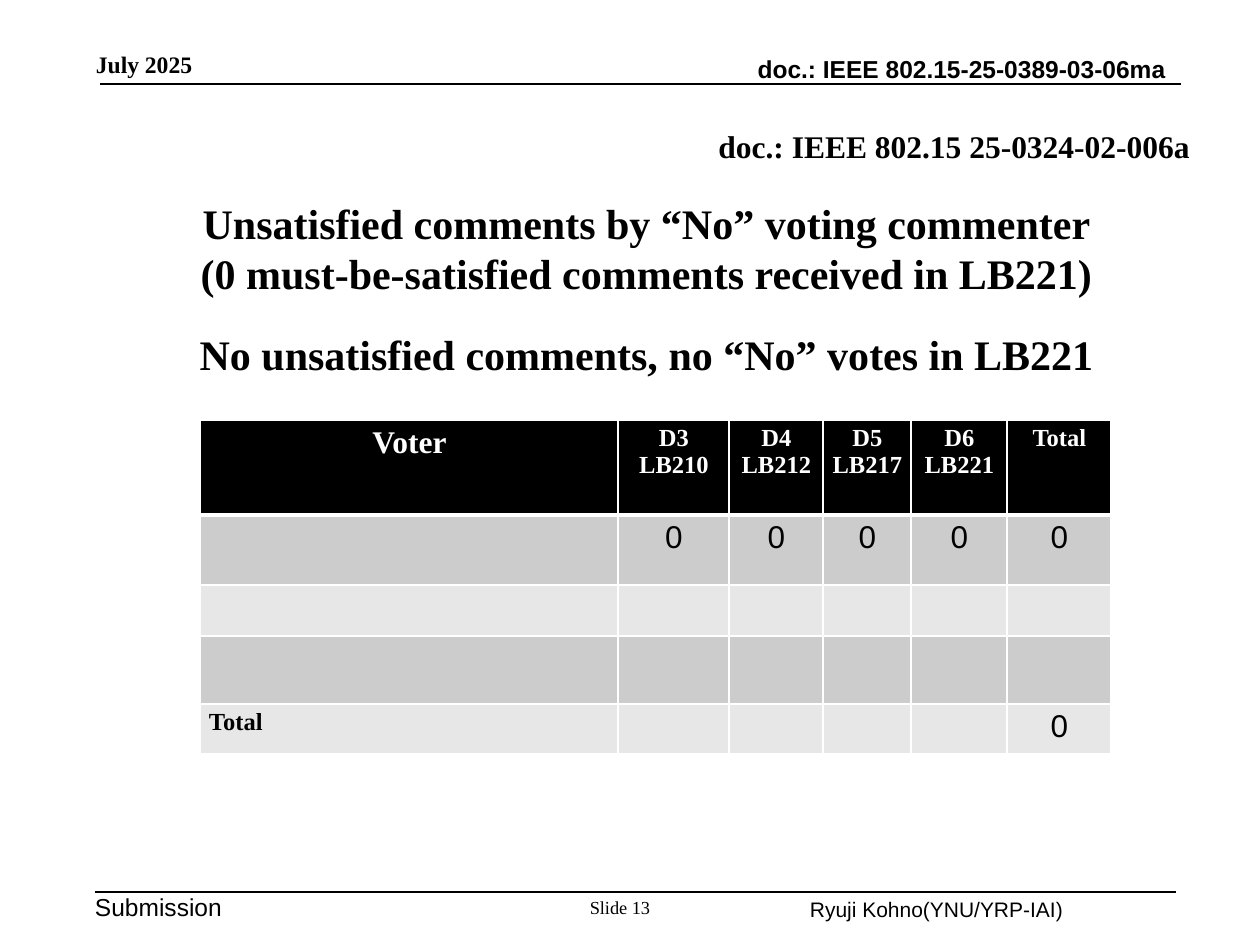
from lxml import etree
from pptx import Presentation
from pptx import util as u
from pptx.dml.color import RGBColor
from pptx.enum import shapes, text
from pptx.oxml import ns

PX = 914400 // 126
BLACK = RGBColor(0, 0, 0)
WHITE = RGBColor(255, 255, 255)
DARK = RGBColor(0xCC, 0xCC, 0xCC)
LIGHT = RGBColor(0xE7, 0xE7, 0xE7)
SERIF, SANS = "Times New Roman", "Arial"
LEFT, MID, RIGHT = text.PP_ALIGN.LEFT, text.PP_ALIGN.CENTER, text.PP_ALIGN.RIGHT
TOP, CENTER, BASE = text.MSO_ANCHOR.TOP, text.MSO_ANCHOR.MIDDLE, text.MSO_ANCHOR.BOTTOM

COLS = [418, 111, 94, 88, 96, 104]
ROWS = [95, 70, 51, 68, 50]
HEADS = ["Voter", "D3 LB210", "D4 LB212", "D5 LB217", "D6\nLB221", "Total"]
CELLS = [HEADS, [""] + ["0"] * 5, [""] * 6, [""] * 6, ["Total"] + [""] * 4 + ["0"]]


def px(n):
    return u.Emu(n * PX)


def write(frame, lines, size, font, bold=False, align=LEFT, color=BLACK, gap=0):
    """Fill a frame, one paragraph a line; a vertical tab breaks inside one."""
    for i, line in enumerate(lines):
        para = frame.add_paragraph() if i else frame.paragraphs[0]
        para.alignment = align
        if i:
            para.space_before = u.Pt(gap)
        for j, part in enumerate(line.split("\v")):
            if j:
                para.add_line_break()
            run = para.add_run()
            run.text = part
            run.font.size = u.Pt(size)
            run.font.name = font
            run.font.bold = bold
            run.font.color.rgb = color


def label(slide, box, lines, size, font, anchor=TOP, **look):
    frame = slide.shapes.add_textbox(*map(px, box)).text_frame
    frame.word_wrap = True
    frame.vertical_anchor = anchor
    frame.margin_left = frame.margin_right = 0
    frame.margin_top = frame.margin_bottom = 0
    write(frame, lines, size, font, **look)


def rule(slide, x, y, w):
    line = slide.shapes.add_connector(
        shapes.MSO_CONNECTOR.STRAIGHT, px(x), px(y), px(x + w), px(y))
    line.line.color.rgb = BLACK
    line.line.width = u.Pt(1)
    etree.SubElement(line._element.spPr, ns.qn("a:effectLst"))


def header(slide, x, y, w):
    label(slide, (x, y, 258, 28), ["July 2025"], 13.5, SERIF, BASE, bold=True)
    label(slide, (x + 524, y + 3, 546, 30), ["doc.: IEEE 802.15-25-0389-03-06ma"],
          14, SANS, BASE, bold=True, align=RIGHT)
    rule(slide, x + 4, y + 34, w)


def footer(slide, x, y, w):
    rule(slide, x, y, w)
    label(slide, (x, y, 146, 30), ["Submission"], 14, SANS)
    label(slide, (x + 488, y + 4, 74, 38), ["Slide 13"], 10.5, SERIF, align=MID)
    label(slide, (x + 715, y + 5, 327, 30), ["Ryuji Kohno(YNU/YRP-IAI)"], 12, SANS)


def title(slide, x, y, w, h):
    label(slide, (x + 451, y - 57, 643, 38), ["doc.: IEEE 802.15 25-0324-02-006a"],
          18, SERIF, BASE, bold=True, align=RIGHT)
    label(slide, (x, y, w, h),
          ["Unsatisfied comments by “No” voting commenter\v"
           "(0 must-be-satisfied comments received in LB221)",
           "No unsatisfied comments, no “No” votes in LB221"],
          24, SERIF, CENTER, bold=True, align=MID, gap=17)


def edge(cell, side, width):
    """Draw one white border of a cell."""
    props = cell._tc.get_or_add_tcPr()
    line = etree.SubElement(props, ns.qn("a:" + side), w=str(u.Pt(width)))
    fill = etree.SubElement(line, ns.qn("a:solidFill"))
    etree.SubElement(fill, ns.qn("a:srgbClr"), val=str(WHITE))


def votes(slide, x, y):
    grid = slide.shapes.add_table(
        len(ROWS), len(COLS), px(x), px(y), px(sum(COLS)), px(sum(ROWS))).table
    for col, w in zip(grid.columns, COLS):
        col.width = px(w)
    for r, (row, h) in enumerate(zip(grid.rows, ROWS)):
        row.height = px(h)
        for c, cell in enumerate(row.cells):
            for side in ("lnL", "lnR", "lnT", "lnB"):
                thick = (r, side) in ((0, "lnB"), (1, "lnT"))
                edge(cell, side, 3 if thick else 1)
            cell.fill.solid()
            cell.fill.fore_color.rgb = BLACK if r == 0 else DARK if r % 2 else LIGHT
            cell.margin_left, cell.margin_right = px(9), px(8)
            cell.margin_top = cell.margin_bottom = px(5)
            word = CELLS[r][c]
            if not word:
                continue
            number = word == "0"
            write(cell.text_frame, word.split("\n"),
                  18 if number or word == "Voter" else 14,
                  SANS if number else SERIF, bold=not number,
                  align=MID if r == 0 or c else LEFT,
                  color=BLACK if r else WHITE)


def main():
    deck = Presentation()
    deck.slide_width, deck.slide_height = px(1260), px(945)
    slide = deck.slides.add_slide(deck.slide_layouts[6])
    header(slide, 96, 50, 1081)
    title(slide, 96, 184, 1101, 208)
    votes(slide, 200, 420)
    footer(slide, 95, 892, 1081)
    deck.save("out.pptx")


if __name__ == "__main__":
    main()
